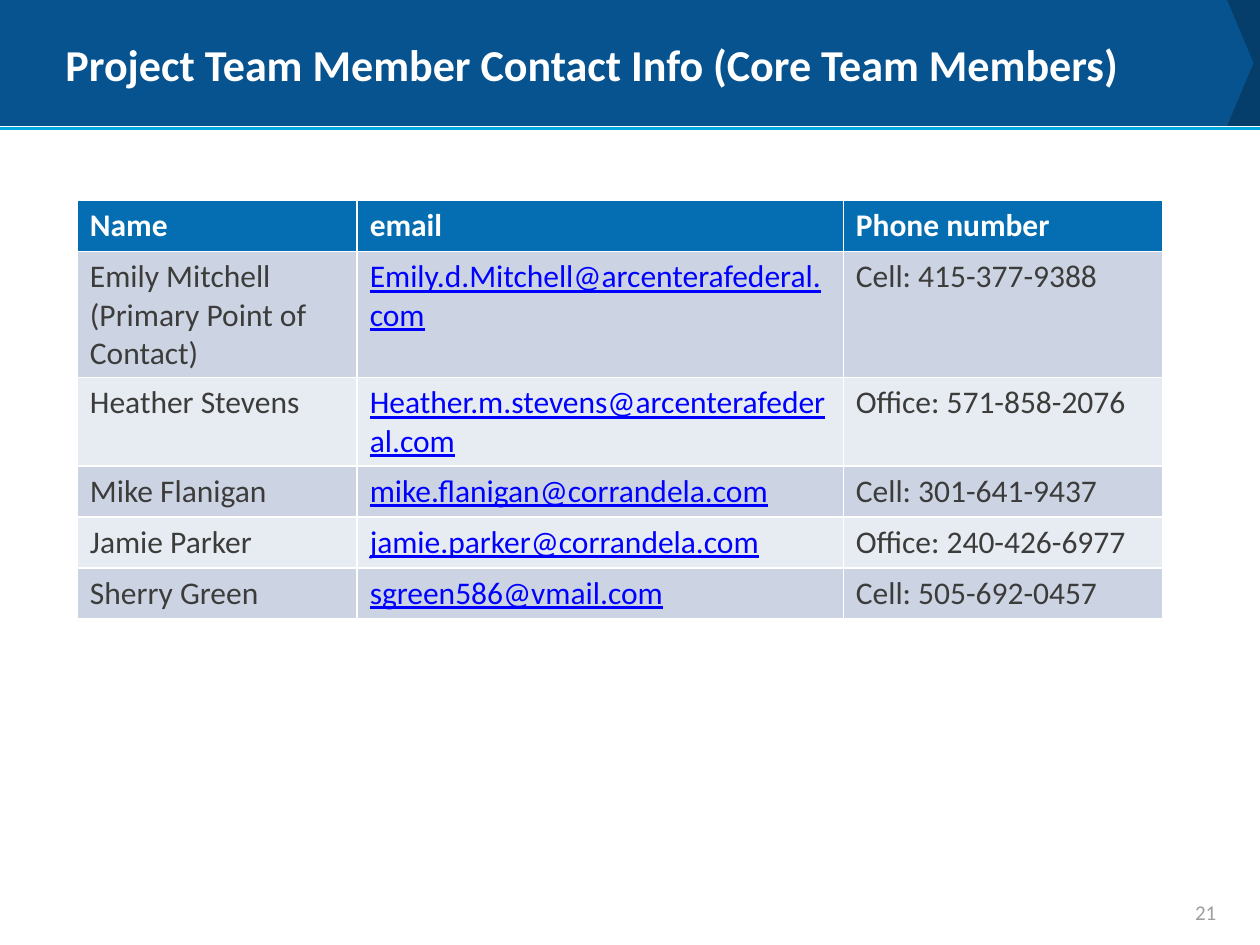
import pptx
import pptx.dml.color
import pptx.enum.shapes
import pptx.enum.text
import pptx.oxml.ns
import pptx.util
from lxml import etree

Cm = pptx.util.Cm
Pt = pptx.util.Pt
MSO_SHAPE = pptx.enum.shapes.MSO_SHAPE
ALIGN = pptx.enum.text.PP_ALIGN
ANCHOR = pptx.enum.text.MSO_ANCHOR


def rgb(value):
    return pptx.dml.color.RGBColor.from_string(value)


class SlideBuilder:
    font = "Calibri"
    title = {"size": Pt(25.2), "bold": True, "color": "FFFFFF"}
    number = {"size": Pt(12), "color": "9E9E9C"}
    header = {"size": Pt(18), "bold": True, "color": "FFFFFF"}
    body = {"size": Pt(18), "bold": False, "color": "3C3C3B"}
    email = {**body, "color": "0000FF", "underline": True}
    header_fill = "056DB1"
    bands = ("CCD4E4", "E7EBF2")

    def __init__(self, slide):
        self.s = slide

    def add_run(self, tf, text, fmt, align=ALIGN.LEFT):
        p = tf.paragraphs[0]
        p.alignment = align
        r = p.add_run()
        r.text = text
        r.font.name = self.font
        for name, value in fmt.items():
            if name == "color":
                r.font.color.rgb = rgb(value)
            else:
                setattr(r.font, name, value)

    def arrow_band(self, x, y, w, h, fill, point):
        sp = self.s.shapes.add_shape(MSO_SHAPE.PENTAGON, Cm(x), Cm(y), Cm(w), Cm(h))
        sp.adjustments[0] = point
        sp.shadow.inherit = False
        sp.fill.solid()
        sp.fill.fore_color.rgb = rgb(fill)
        sp.line.fill.background()

    def rule(self, x1, x2, y, color, width):
        line = self.s.shapes.add_connector(
            pptx.enum.shapes.MSO_CONNECTOR.STRAIGHT, Cm(x1), Cm(y), Cm(x2), Cm(y))
        line.line.color.rgb = rgb(color)
        line.line.width = Pt(width)
        sp_pr = line._element.spPr
        etree.SubElement(sp_pr, pptx.oxml.ns.qn("a:effectLst"))

    def text(self, x, y, w, h, text, fmt, align=ALIGN.LEFT):
        sp = self.s.shapes.add_textbox(Cm(x), Cm(y), Cm(w), Cm(h))
        tf = sp.text_frame
        tf.word_wrap = True
        tf.vertical_anchor = ANCHOR.MIDDLE
        self.add_run(tf, text, fmt, align)

    def table(self, x, y, widths, row_height, rows):
        frame = self.s.shapes.add_table(
            len(rows), len(widths), Cm(x), Cm(y),
            Cm(sum(widths)), Cm(row_height * len(rows)))
        tbl = frame.table
        for col, width in zip(tbl.columns, widths):
            col.width = Cm(width)
        for i, row in enumerate(rows):
            tbl.rows[i].height = Cm(row_height)
            fill = self.bands[(i - 1) % 2] if i else self.header_fill
            formats = (self.body, self.email, self.body) if i else (self.header,) * 3
            for j, (value, fmt) in enumerate(zip(row, formats)):
                cell = tbl.cell(i, j)
                cell.fill.solid()
                cell.fill.fore_color.rgb = rgb(fill)
                self.add_run(cell.text_frame, value, fmt)


def main():
    prs = pptx.Presentation()
    prs.slide_width, prs.slide_height = Cm(25.4), Cm(19.05)
    b = SlideBuilder(prs.slides.add_slide(prs.slide_layouts[6]))

    b.arrow_band(24.26, 0, 1.14, 2.54, "053E6B", 0)
    b.arrow_band(0, 0, 25.27, 2.54, "07538F", 0.21)
    b.rule(0, 25.4, 2.59, "00A8E1", 2.25)
    b.text(1.07, 0.2, 23.29, 2.16,
           "Project Team Member Contact Info (Core Team Members)", b.title)
    b.text(18.85, 18.06, 5.92, 0.64, "21", b.number, ALIGN.RIGHT)
    b.table(1.56, 4.04, (5.64, 9.8, 6.43), 1.03, [
        ("Name", "email", "Phone number"),
        ("Emily Mitchell (Primary Point of Contact)",
         "Emily.d.Mitchell@arcenterafederal.com", "Cell: 415-377-9388"),
        ("Heather Stevens",
         "Heather.m.stevens@arcenterafederal.com", "Office: 571-858-2076"),
        ("Mike Flanigan", "mike.flanigan@corrandela.com", "Cell: 301-641-9437"),
        ("Jamie Parker", "jamie.parker@corrandela.com", "Office: 240-426-6977"),
        ("Sherry Green", "sgreen586@vmail.com", "Cell: 505-692-0457"),
    ])

    prs.save("out.pptx")


if __name__ == "__main__":
    main()
